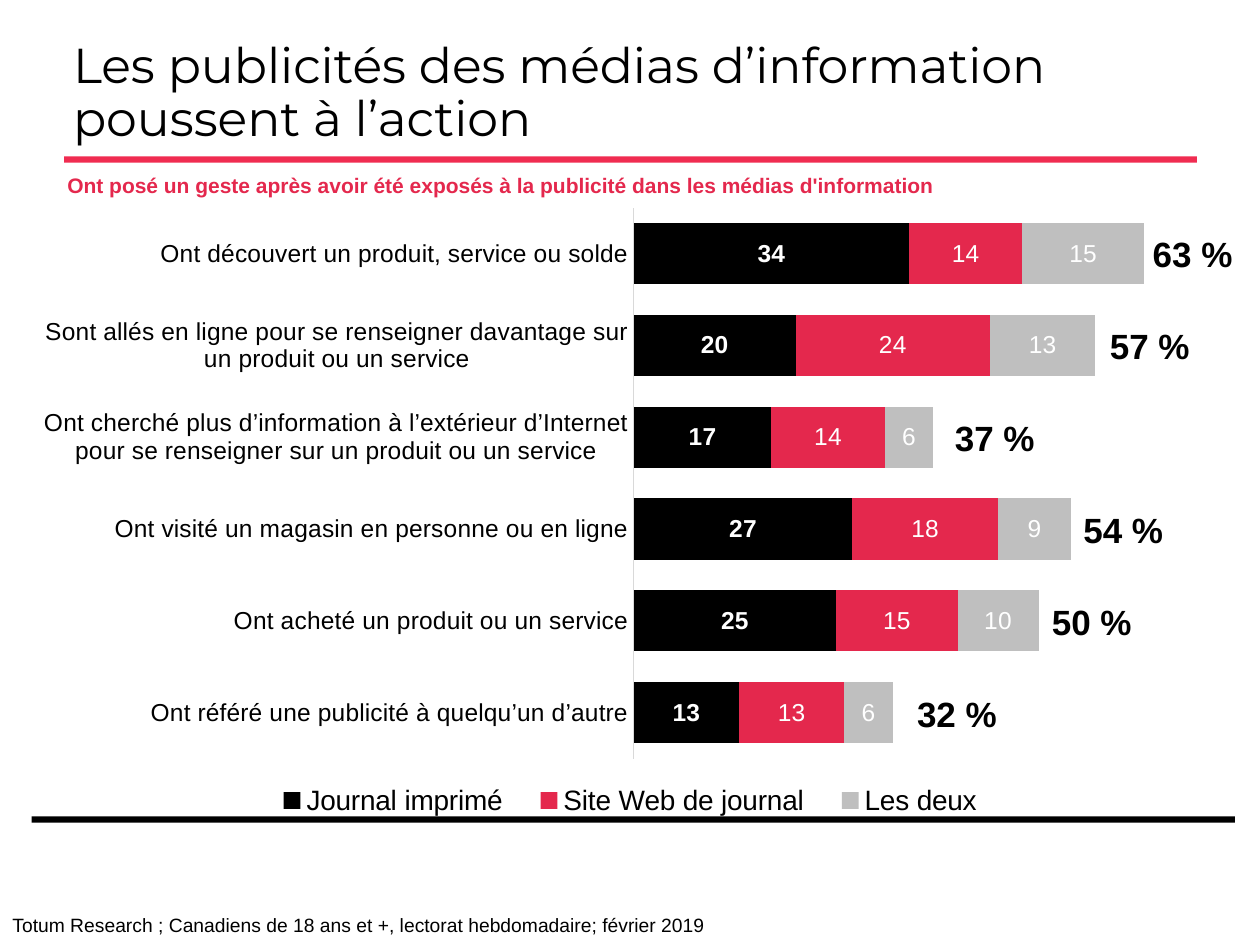
from lxml import etree
from pptx import Presentation
from pptx import util as u
from pptx.chart.data import CategoryChartData
from pptx.dml.color import RGBColor
from pptx.enum import chart as ch, shapes, text
from pptx.oxml import ns

COLORS = {"black": "000000", "rule": "F02C51", "red": "E4284D",
          "gray": "BFBFBF", "axis": "D9D9D9", "white": "FFFFFF"}
HEADLINE = ["Les publicités des médias d’information ", "poussent à l’action"]
CHART_TITLE = ("Ont posé un geste après avoir été exposés à la publicité "
               "dans les médias d'information")
SOURCE = ("Totum Research ; Canadiens de 18 ans et +, "
          "lectorat hebdomadaire; février 2019")
MEDIA = [("Journal imprimé", "black", True),
         ("Site Web de journal", "red", False),
         ("Les deux", "gray", False)]
ACTIONS = [
    ("Ont découvert un produit, service ou solde", (34, 14, 15), 9.05),
    ("Sont allés en ligne pour se renseigner davantage sur un produit ou un service",
     (20, 24, 13), 8.71),
    ("Ont cherché plus d’information à l’extérieur d’Internet pour se renseigner "
     "sur un produit ou un service", (17, 14, 6), 7.48),
    ("Ont visité un magasin en personne ou en ligne", (27, 18, 9), 8.5),
    ("Ont acheté un produit ou un service", (25, 15, 10), 8.25),
    ("Ont référé une publicité à quelqu’un d’autre", (13, 13, 6), 7.18),
]
RULES = [("black", 0.25, 6.48, 9.55), ("rule", 0.51, 1.24, 8.99)]
FIRST_TOTAL, ROW_PITCH = 1.8, 0.73


def rgb(name):
    return RGBColor.from_string(COLORS[name])


def style(font, size, color="black", bold=False, face="Arial"):
    font.size, font.bold, font.name = u.Pt(size), bold, face
    font.color.rgb = rgb(color)


def add_label(slide, words, box, size, bold=False):
    label = slide.shapes.add_textbox(*map(u.Inches, box))
    frame = label.text_frame
    frame.word_wrap = False
    frame.auto_size = text.MSO_AUTO_SIZE.SHAPE_TO_FIT_TEXT
    run = frame.paragraphs[0].add_run()
    run.text = words
    style(run.font, size, bold=bold)


def place(parent, index, **position):
    for old in parent.findall(ns.qn("c:layout")):
        parent.remove(old)
    layout = etree.Element(ns.qn("c:layout"))
    manual = etree.SubElement(layout, ns.qn("c:manualLayout"))
    for tag, value in position.items():
        etree.SubElement(manual, ns.qn("c:" + tag)).set("val", str(value))
    parent.insert(index, layout)


def add_headline(slide):
    box = slide.shapes.add_textbox(*map(u.Inches, (0.51, 0.02, 8.62, 1.45)))
    frame = box.text_frame
    frame.word_wrap = True
    frame.vertical_anchor = text.MSO_ANCHOR.MIDDLE
    frame.margin_left = frame.margin_right = u.Inches(0.07)
    frame.margin_top = frame.margin_bottom = u.Inches(0.04)
    paragraph = frame.paragraphs[0]
    paragraph.line_spacing = 0.9
    for i, words in enumerate(HEADLINE):
        if i:
            paragraph.add_line_break()
        run = paragraph.add_run()
        run.text = words
        style(run.font, 28, face="Montserrat")


def add_actions_chart(slide):
    data = CategoryChartData(number_format="0")
    rows = ACTIONS[::-1]
    data.categories = [action for action, _, _ in rows]
    for i, (medium, _, _) in enumerate(MEDIA):
        data.add_series(medium, [shares[i] for _, shares, _ in rows])
    chart = slide.shapes.add_chart(
        ch.XL_CHART_TYPE.BAR_STACKED,
        *map(u.Inches, (0.23, 1.14, 9.45, 5.46)), data).chart
    style(chart.font, 10)

    run = chart.chart_title.text_frame.paragraphs[0].add_run()
    run.text = CHART_TITLE
    style(run.font, 12, "red", True)
    chart.chart_title.include_in_layout = True
    place(chart.chart_title._element, 1, xMode="edge", yMode="edge", x=0.029, y=0.037)
    place(chart._chartSpace.chart.plotArea, 0, layoutTarget="inner",
          xMode="edge", yMode="edge", x=0.508, y=0.093, w=0.476, h=0.801)

    actions = chart.category_axis
    actions.major_tick_mark = ch.XL_TICK_MARK.NONE
    actions.format.line.color.rgb = rgb("axis")
    actions.format.line.width = u.Pt(0.75)
    style(actions.tick_labels.font, 14)
    shares = chart.value_axis
    shares.minimum_scale, shares.maximum_scale = 0, 70
    shares.has_major_gridlines = False
    shares.visible = False

    chart.has_legend = True
    chart.legend.position = ch.XL_LEGEND_POSITION.BOTTOM
    chart.legend.include_in_layout = False
    style(chart.legend.font, 16)
    place(chart.legend._element, 1, xMode="edge", yMode="edge",
          x=0.19, y=0.92, w=0.63, h=0.07)

    plot = chart.plots[0]
    plot.gap_width, plot.overlap = 50, 100
    plot.vary_by_categories = False
    for series, (_, color, bold) in zip(plot.series, MEDIA):
        series.format.fill.solid()
        series.format.fill.fore_color.rgb = rgb(color)
        series.data_labels.show_value = True
        style(series.data_labels.font, 14, "white", bold)


def main():
    deck = Presentation()
    deck.slide_width, deck.slide_height = u.Inches(10), u.Inches(7.5)
    slide = deck.slides.add_slide(deck.slide_layouts[6])
    for color, left, top, width in RULES:
        rule = slide.shapes.add_shape(
            shapes.MSO_SHAPE.RECTANGLE,
            *map(u.Inches, (left, top, width, 0.05)))
        rule.shadow.inherit = False
        rule.fill.solid()
        rule.fill.fore_color.rgb = rgb(color)
        rule.line.fill.background()
    add_headline(slide)
    add_actions_chart(slide)
    add_label(slide, SOURCE, (0, 7.2, 5.79, 0.29), 11)
    for row, (_, shares, left) in enumerate(ACTIONS):
        top = FIRST_TOTAL + row * ROW_PITCH
        add_label(slide, f"{sum(shares)} %", (left, top, 0.84, 0.44), 20, True)
    deck.save("out.pptx")


if __name__ == "__main__":
    main()
